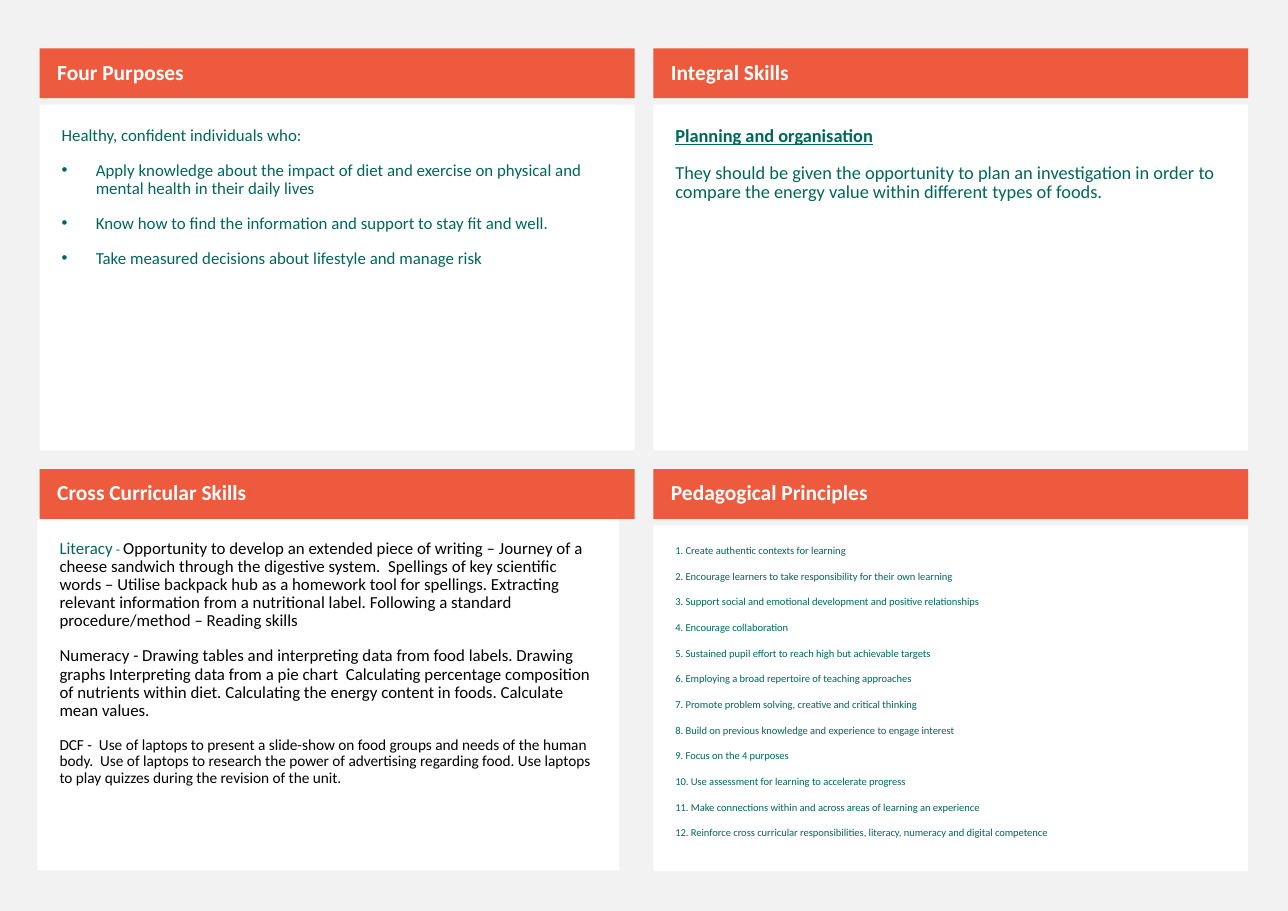
from pptx import Presentation, util as u
from pptx.dml.color import RGBColor
from pptx.enum import shapes, text
from lxml import etree

theme = {
    "font": "Calibri",
    "page": "F2F2F2", "card": "FFFFFF", "banner": "ED5A3E",
    "title": "FFFFFF", "green": "006758", "black": "000000",
    "heading": 14, "lead": 12, "copy": 11, "note": 10, "dash": 9, "list": 6.9,
    "gap": 11,
}
grid = {"left": 0.36, "top": 0.44, "column": 5.57, "row": 3.82}
card_width, banner_height, body_offset, body_height = 5.4, 0.45, 0.51, 3.14
banner_format = {
    "margin_left": u.Inches(0.16), "margin_right": u.Inches(0.1),
    "margin_top": u.Inches(0.05), "margin_bottom": u.Inches(0.05),
    "vertical_anchor": text.MSO_ANCHOR.MIDDLE,
}
body_format = {f"margin_{side}": u.Inches(0.2) for side in ("left", "top", "right", "bottom")}
body_format["vertical_anchor"] = text.MSO_ANCHOR.TOP

principles = [
    "Create authentic contexts for learning",
    "Encourage learners to take responsibility for their own learning",
    "Support social and emotional development and positive relationships",
    "Encourage collaboration",
    "Sustained pupil effort to reach high but achievable targets",
    "Employing a broad repertoire of teaching approaches",
    "Promote problem solving, creative and critical thinking",
    "Build on previous knowledge and experience to engage interest",
    "Focus on the 4 purposes",
    "Use assessment for learning to accelerate progress",
    "Make connections within and across areas of learning an experience",
    "Reinforce cross curricular responsibilities, literacy, numeracy and digital competence",
]
purposes = [
    "Apply knowledge about the impact of diet and exercise on physical and mental health in their daily lives",
    "Know how to find the information and support to stay fit and well.",
    "Take measured decisions about lifestyle and manage risk",
]
literacy = (
    "Opportunity to develop an extended piece of writing – Journey of a cheese sandwich "
    "through the digestive system.  Spellings of key scientific words – Utilise backpack hub "
    "as a homework tool for spellings. Extracting relevant information from a nutritional label. "
    "Following a standard procedure/method – Reading skills"
)
numeracy = (
    "Numeracy - Drawing tables and interpreting data from food labels. Drawing graphs "
    "Interpreting data from a pie chart  Calculating percentage composition of nutrients "
    "within diet. Calculating the energy content in foods. Calculate mean values."
)
digital = (
    "DCF -  Use of laptops to present a slide-show on food groups and needs of the human body.  "
    "Use of laptops to research the power of advertising regarding food. "
    "Use laptops to play quizzes during the revision of the unit."
)
investigation = (
    "They should be given the opportunity to plan an investigation in order "
    "to compare the energy value within different types of foods."
)

panels = [
    {"title": "Four Purposes", "cell": (0, 0),
     "lines": [[("Healthy, confident individuals who:", "copy", "green", {})]]
     + [[(purpose, "copy", "green", {})] for purpose in purposes],
     "bullets_from": 1},
    {"title": "Integral Skills", "cell": (1, 0),
     "lines": [[("Planning and organisation", "lead", "green", {"bold": True, "underline": True})],
               [(investigation, "lead", "green", {})]]},
    {"title": "Cross Curricular Skills", "cell": (0, 1), "body": (0.34, 4.7, 5.28, 3.2),
     "lines": [[("Literacy", "copy", "green", {}), (" - ", "dash", "green", {}),
                (literacy, "copy", "black", {})],
               [(numeracy, "copy", "black", {})],
               [(digital, "note", "black", {})]]},
    {"title": "Pedagogical Principles", "cell": (1, 1), "spacing": 0.7,
     "lines": [[(f"{number}. {principle}", "list", "green", {})]
               for number, principle in enumerate(principles, 1)]},
]


def add_block(place, fill, frame_format, lines, spacing=0.9, bullets_from=None):
    block = slide.shapes.add_shape(shapes.MSO_SHAPE.RECTANGLE, *map(u.Inches, place))
    block.shadow.inherit = False
    block.fill.solid()
    block.fill.fore_color.rgb = RGBColor.from_string(theme[fill])
    block.line.fill.background()
    frame = block.text_frame
    frame.word_wrap = True
    for name, value in frame_format.items():
        setattr(frame, name, value)
    for index, line in enumerate(lines):
        paragraph = frame.add_paragraph() if index else frame.paragraphs[0]
        for name, value in {"alignment": text.PP_ALIGN.LEFT, "line_spacing": spacing,
                            "space_before": u.Pt(theme["gap"])}.items():
            setattr(paragraph, name, value)
        if bullets_from is not None and index >= bullets_from:
            add_bullet(paragraph)
        for words, size, color, emphasis in line:
            run = paragraph.add_run()
            run.text = words
            run.font.color.rgb = RGBColor.from_string(theme[color])
            for name, value in {"name": theme["font"], "size": u.Pt(theme[size]), **emphasis}.items():
                setattr(run.font, name, value)


def add_bullet(paragraph):
    properties = paragraph._p.get_or_add_pPr()
    properties.set("marL", str(u.Inches(0.31)))
    properties.set("indent", str(-u.Inches(0.31)))
    namespace = properties.nsmap["a"]
    etree.SubElement(properties, f"{{{namespace}}}buFont", typeface="Arial")
    etree.SubElement(properties, f"{{{namespace}}}buChar", char="•")


deck = Presentation()
deck.slide_width, deck.slide_height = u.Inches(11.69), u.Inches(8.27)
slide = deck.slides.add_slide(deck.slide_layouts[6])
slide.background.fill.solid()
slide.background.fill.fore_color.rgb = RGBColor.from_string(theme["page"])

for panel in panels:
    column, row = panel["cell"]
    left = grid["left"] + column * grid["column"]
    top = grid["top"] + row * grid["row"]
    body = panel.get("body", (left, top + body_offset, card_width, body_height))
    add_block(body, "card", body_format, panel["lines"],
              panel.get("spacing", 0.9), panel.get("bullets_from"))
    add_block((left, top, card_width, banner_height), "banner", banner_format,
              [[(panel["title"], "heading", "title", {"bold": True})]])

deck.save("out.pptx")
